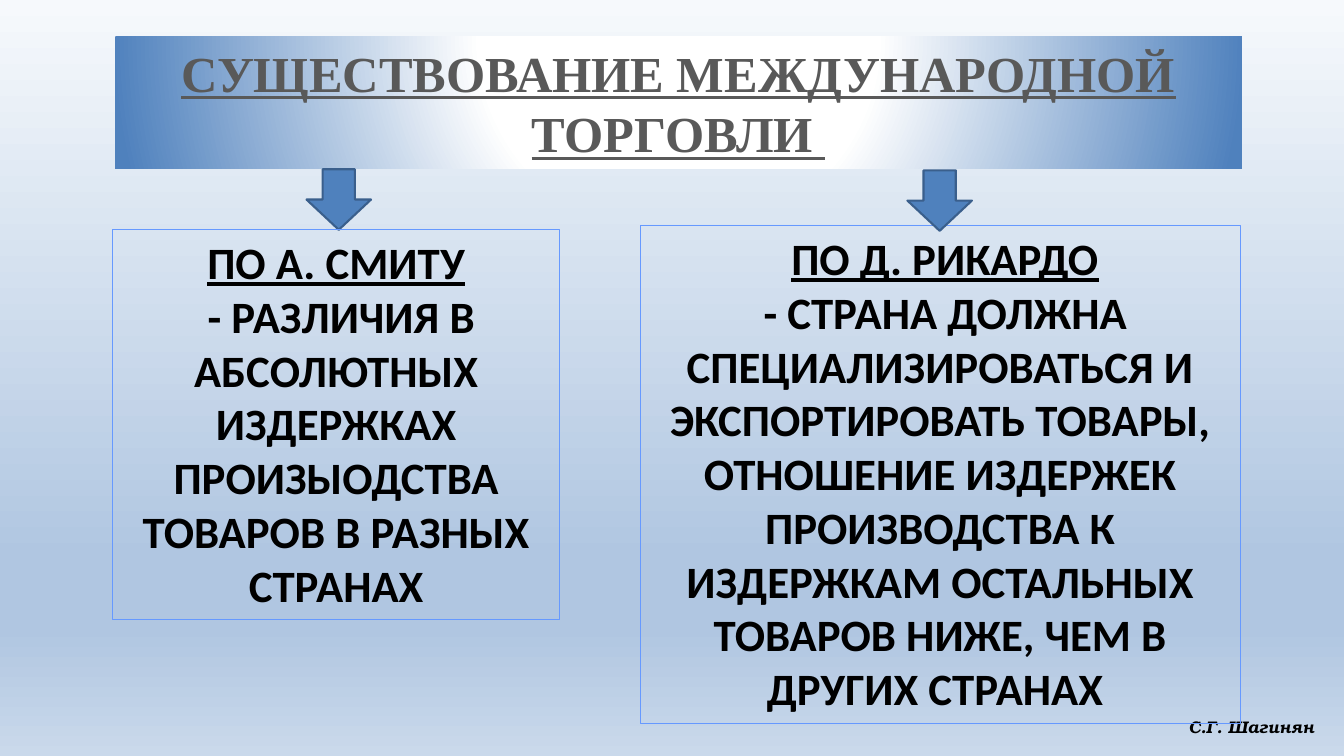
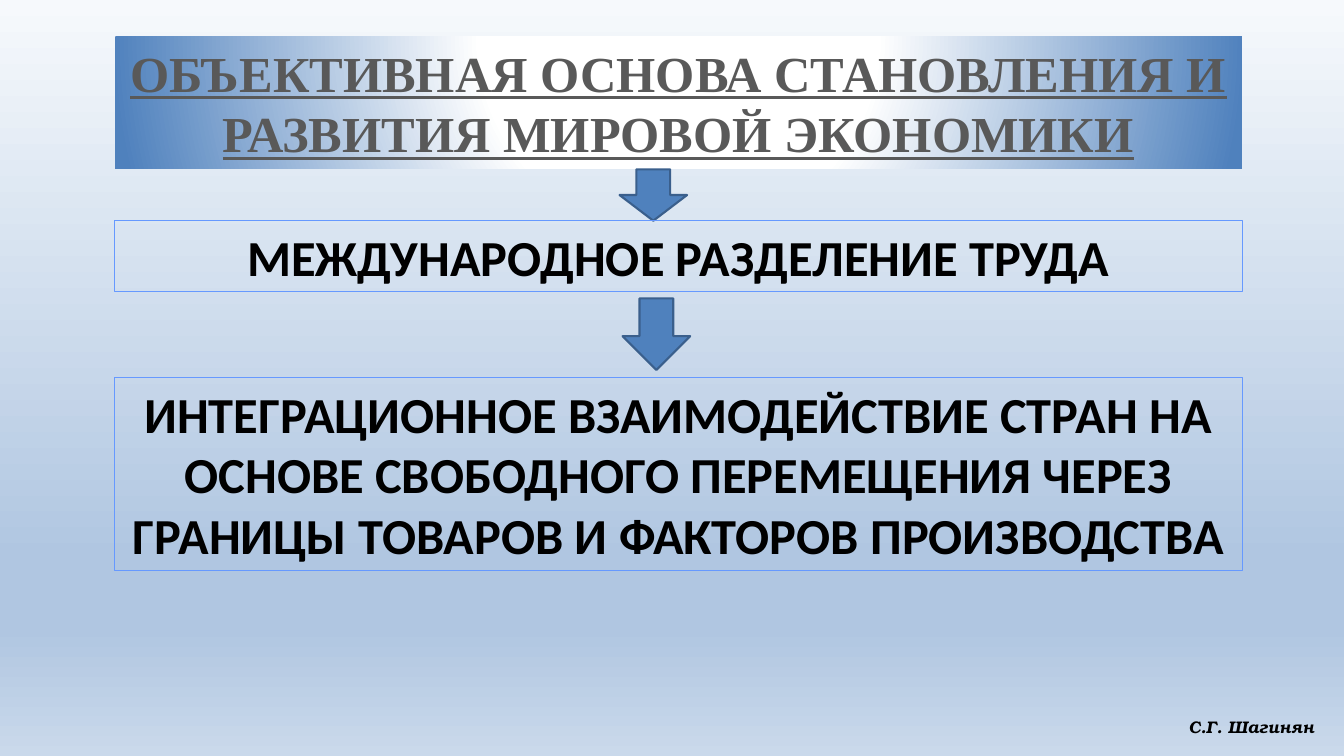
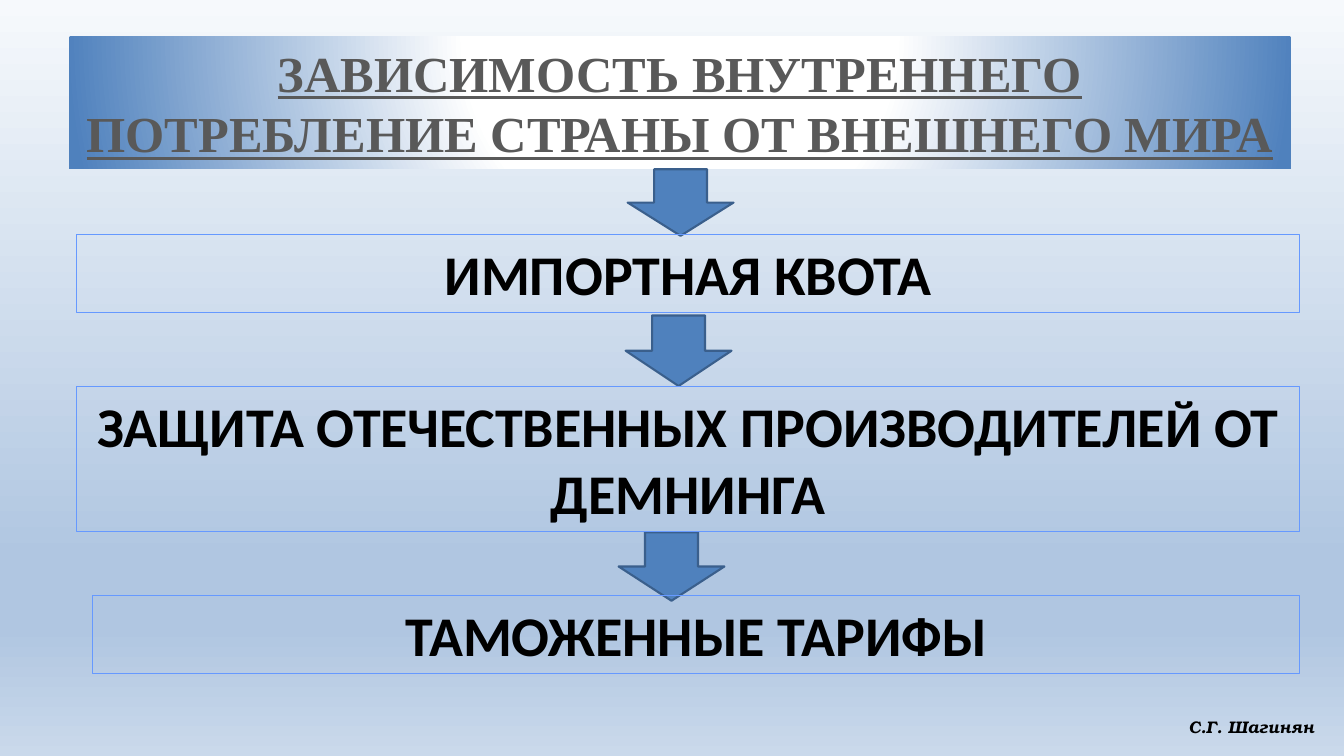
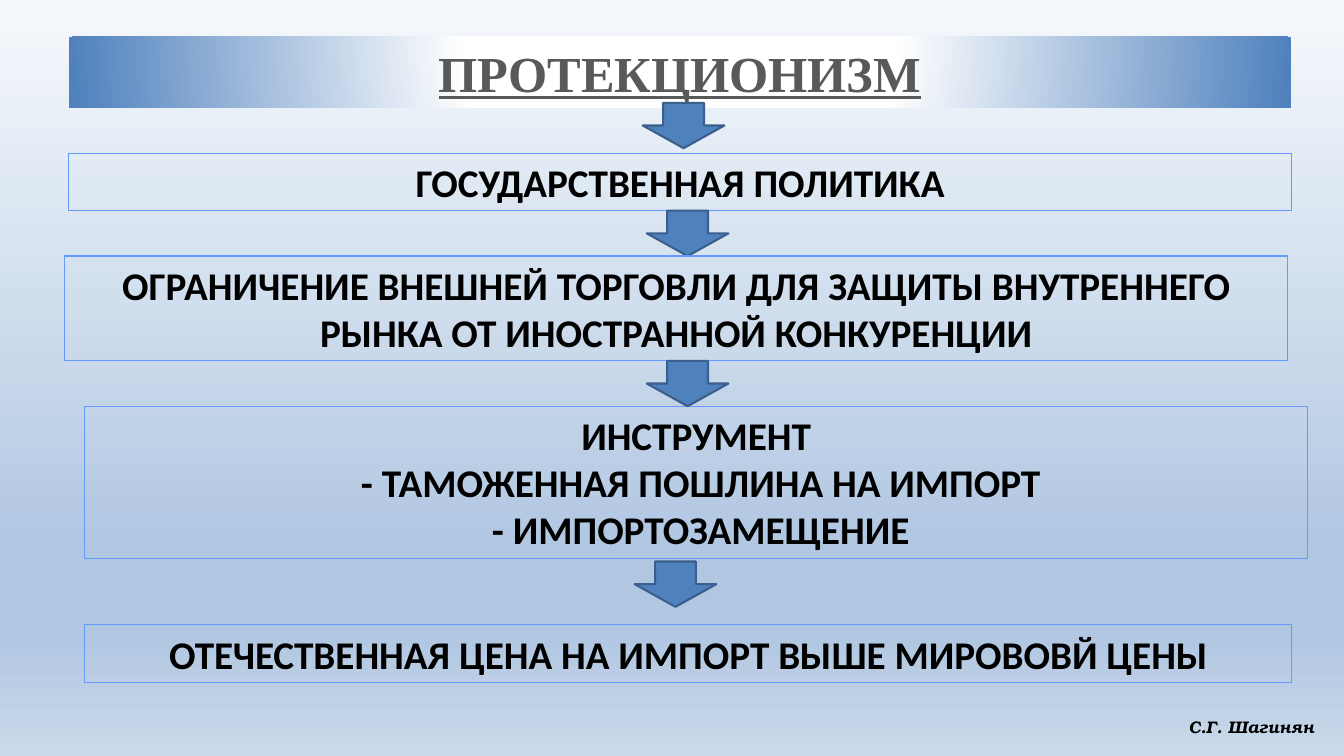
from dataclasses import dataclass

from lxml.etree import SubElement
from pptx import Presentation
from pptx.dml.color import RGBColor
from pptx.enum.shapes import MSO_SHAPE
from pptx.enum.text import MSO_ANCHOR, MSO_AUTO_SIZE, PP_ALIGN
from pptx.oxml.ns import qn
from pptx.util import Inches, Pt

CELL = 0.1  # grid step in inches: columns and rows below count these steps
LINE_HEIGHT = 1.21
PADDING = 1  # top and bottom inset of a text box together, in rows
TITLE_ROW = 3.65

BLACK, GREY = "000000", "595959"
BLUE, DARK_BLUE, OUTLINE = "4F81BD", "3A5F8C", "6699FF"
SKY = ((0, "F6F9FC"), (74, "B0C6E1"), (83, "B0C6E1"), (100, "CAD9EB"))
GLOW = ((0, "FFFFFF"), (35, "FFFFFF"), (100, BLUE))
GLOW_FOCUS = {"l": 50, "t": -80, "r": 50, "b": 180}
AUTHOR = "С.Г. Шагинян"


@dataclass(frozen=True)
class Style:
    size: int
    font: str = "Calibri"
    color: str = BLACK
    underline: bool = False
    italic: bool = False


TITLE = Style(36, "Times New Roman", GREY, underline=True)
SIGNATURE = Style(12, "TeX Gyre Bonum", italic=True)
HEADING = Style(32, underline=True)


@dataclass(frozen=True)
class Run:
    text: str
    style: Style


@dataclass(frozen=True)
class Box:
    """Outlined text; a paragraph is a string or a tuple of runs."""
    col: float
    row: float
    cols: float
    lines: int
    size: int
    paragraphs: tuple


@dataclass(frozen=True)
class Arrow:
    center: float
    row: float
    cols: float
    rows: float


@dataclass(frozen=True)
class Page:
    title: str
    title_lines: int
    col: float
    cols: float
    items: tuple


PAGES = (
    Page("СУЩЕСТВОВАНИЕ МЕЖДУНАРОДНОЙ ТОРГОВЛИ ", 2, 11.4, 111.8, (
        Arrow(33.6, 16.8, 6.4, 6),
        Box(11.2, 22.8, 44.3, 7, 32, (
            (Run("ПО А. СМИТУ", HEADING),),
            " - РАЗЛИЧИЯ В АБСОЛЮТНЫХ ИЗДЕРЖКАХ ПРОИЗЫОДСТВА ТОВАРОВ "
            "В РАЗНЫХ СТРАНАХ")),
        Box(63.5, 22.4, 59.5, 9, 32, (
            (Run(" ", Style(30)), Run("ПО Д. РИКАРДО", HEADING)),
            " - СТРАНА ДОЛЖНА СПЕЦИАЛИЗИРОВАТЬСЯ И ЭКСПОРТИРОВАТЬ ТОВАРЫ, "
            "ОТНОШЕНИЕ ИЗДЕРЖЕК ПРОИЗВОДСТВА К ИЗДЕРЖКАМ ОСТАЛЬНЫХ ТОВАРОВ "
            "НИЖЕ, ЧЕМ В ДРУГИХ СТРАНАХ ")),
        Arrow(93.2, 16.9, 6.4, 6),
    )),
    Page("ОБЪЕКТИВНАЯ ОСНОВА СТАНОВЛЕНИЯ И РАЗВИТИЯ МИРОВОЙ ЭКОНОМИКИ",
         2, 11.4, 111.8, (
        Arrow(64.8, 16.8, 6.7, 5.1),
        Box(11.4, 21.9, 111.8, 1, 36, ("МЕЖДУНАРОДНОЕ РАЗДЕЛЕНИЕ ТРУДА",)),
        Box(11.4, 37.5, 111.8, 3, 36, (
            "ИНТЕГРАЦИОННОЕ ВЗАИМОДЕЙСТВИЕ СТРАН НА ОСНОВЕ СВОБОДНОГО "
            "ПЕРЕМЕЩЕНИЯ ЧЕРЕЗ ГРАНИЦЫ ТОВАРОВ И ФАКТОРОВ ПРОИЗВОДСТВА",)),
        Arrow(65.1, 29.6, 6.7, 7.1),
    )),
    Page("ЗАВИСИМОСТЬ ВНУТРЕННЕГО ПОТРЕБЛЕНИЕ СТРАНЫ ОТ ВНЕШНЕГО МИРА",
         2, 6.8, 121.3, (
        Arrow(67.5, 16.8, 10.5, 6.6),
        Box(7.6, 23.3, 121.3, 1, 40, ("ИМПОРТНАЯ КВОТА",)),
        Arrow(67.3, 31.3, 10.5, 7),
        Arrow(66.6, 52.8, 10.5, 6.8),
        Box(7.6, 38.3, 121.3, 2, 40, (
            "ЗАЩИТА ОТЕЧЕСТВЕННЫХ ПРОИЗВОДИТЕЛЕЙ ОТ ДЕМНИНГА",)),
        Box(9.2, 59.1, 119.7, 1, 40, ("ТАМОЖЕННЫЕ ТАРИФЫ",)),
    )),
    Page("ПРОТЕКЦИОНИЗМ", 1, 6.8, 121.3, (
        Arrow(67.8, 10.2, 8.1, 4.5),
        Box(6.8, 15.2, 121.3, 1, 28, ("ГОСУДАРСТВЕННАЯ ПОЛИТИКА",)),
        Box(8.4, 40.3, 121.3, 3, 28, (
            "ИНСТРУМЕНТ",
            " - ТАМОЖЕННАЯ ПОШЛИНА НА ИМПОРТ",
            " - ИМПОРТОЗАМЕЩЕНИЕ")),
        Box(8.4, 62, 119.7, 1, 28, (
            "ОТЕЧЕСТВЕННАЯ ЦЕНА НА ИМПОРТ ВЫШЕ МИРОВОВЙ ЦЕНЫ",)),
        Arrow(68.2, 20.9, 8.1, 4.5),
        Box(6.4, 25.4, 121.3, 2, 28, (
            "ОГРАНИЧЕНИЕ ВНЕШНЕЙ ТОРГОВЛИ ДЛЯ ЗАЩИТЫ ВНУТРЕННЕГО РЫНКА "
            "ОТ ИНОСТРАННОЙ КОНКУРЕНЦИИ",)),
        Arrow(68.2, 35.8, 8.1, 4.5),
        Arrow(67, 55.7, 8.1, 4.5),
    )),
)


def rgb(color: str) -> RGBColor:
    return RGBColor.from_string(color)


def cells(*counts: float) -> list:
    return [Inches(n * CELL) for n in counts]


def text_rows(lines: int, size: int) -> float:
    """Height, in rows, of a box that fits its lines of text."""
    return PADDING + lines * size * LINE_HEIGHT / 72 / CELL


def fill_gradient(owner, fill, stops: tuple, focus: dict | None = None) -> None:
    """Run the stops downwards, or outwards from a focus given in percent."""
    fill.gradient()
    grad = owner.find(".//" + qn("a:gradFill"))
    for child in list(grad):
        grad.remove(child)
    stop_list = SubElement(grad, qn("a:gsLst"))
    for position, color in stops:
        gs = SubElement(stop_list, qn("a:gs"), pos=str(position * 1000))
        SubElement(gs, qn("a:srgbClr"), val=color)
    if focus:
        shade = SubElement(grad, qn("a:path"), {"path": "circle"})
        SubElement(shade, qn("a:fillToRect"),
                   {side: str(share * 1000) for side, share in focus.items()})
    else:
        SubElement(grad, qn("a:lin"), ang="5400000", scaled="0")


def write(sp, paragraphs: tuple, style: Style, align=PP_ALIGN.CENTER) -> None:
    tf = sp.text_frame
    tf.word_wrap = True
    tf.auto_size = MSO_AUTO_SIZE.SHAPE_TO_FIT_TEXT
    tf.vertical_anchor = MSO_ANCHOR.TOP
    for i, content in enumerate(paragraphs):
        p = tf.add_paragraph() if i else tf.paragraphs[0]
        p.alignment = align
        runs = (Run(content, style),) if isinstance(content, str) else content
        for run in runs:
            r = p.add_run()
            r.text = run.text
            font = r.font
            font.name, font.size = run.style.font, Pt(run.style.size)
            font.bold, font.italic = True, run.style.italic
            font.underline = run.style.underline
            font.color.rgb = rgb(run.style.color)


def add_plain_shape(s, kind, col: float, row: float, cols: float, rows: float):
    sp = s.shapes.add_shape(kind, *cells(col, row, cols, rows))
    sp.shadow.inherit = False
    return sp


def outline(sp, color: str, width: float) -> None:
    sp.line.color.rgb = rgb(color)
    sp.line.width = Pt(width)


def add_title(s, page: Page) -> None:
    sp = add_plain_shape(s, MSO_SHAPE.RECTANGLE, page.col, TITLE_ROW, page.cols,
                         text_rows(page.title_lines, TITLE.size))
    fill_gradient(sp._element, sp.fill, GLOW, GLOW_FOCUS)
    sp.line.fill.background()
    write(sp, (page.title,), TITLE)


def add_box(s, box: Box) -> None:
    sp = add_plain_shape(s, MSO_SHAPE.RECTANGLE, box.col, box.row, box.cols,
                         text_rows(box.lines, box.size))
    sp.fill.background()
    outline(sp, OUTLINE, 0.75)
    write(sp, box.paragraphs, Style(box.size))


def add_arrow(s, arrow: Arrow) -> None:
    sp = add_plain_shape(s, MSO_SHAPE.DOWN_ARROW, arrow.center - arrow.cols / 2,
                         arrow.row, arrow.cols, arrow.rows)
    sp.fill.solid()
    sp.fill.fore_color.rgb = rgb(BLUE)
    outline(sp, DARK_BLUE, 1.5)


def add_author(s) -> None:
    sp = s.shapes.add_textbox(*cells(116.9, 70.6, 15.4, 3))
    write(sp, (AUTHOR,), SIGNATURE, PP_ALIGN.LEFT)


def add_page(prs, page: Page) -> None:
    s = prs.slides.add_slide(prs.slide_layouts[6])
    add_title(s, page)
    add_author(s)
    for item in page.items:
        if isinstance(item, Box):
            add_box(s, item)
        else:
            add_arrow(s, item)


def main() -> None:
    prs = Presentation()
    prs.slide_width, prs.slide_height = Inches(13.33), Inches(7.5)
    master = prs.slide_master
    fill_gradient(master._element, master.background.fill, SKY)
    for page in PAGES:
        add_page(prs, page)
    prs.save("out.pptx")


if __name__ == "__main__":
    main()
